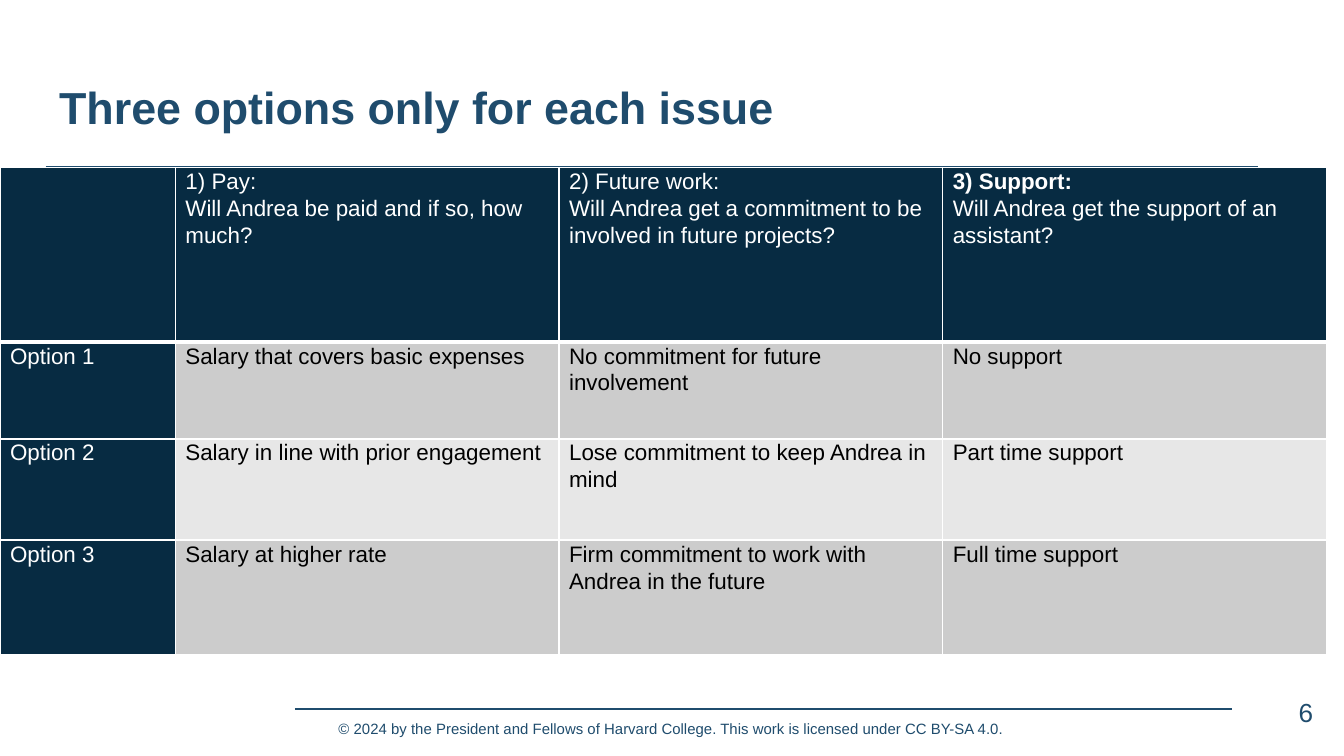
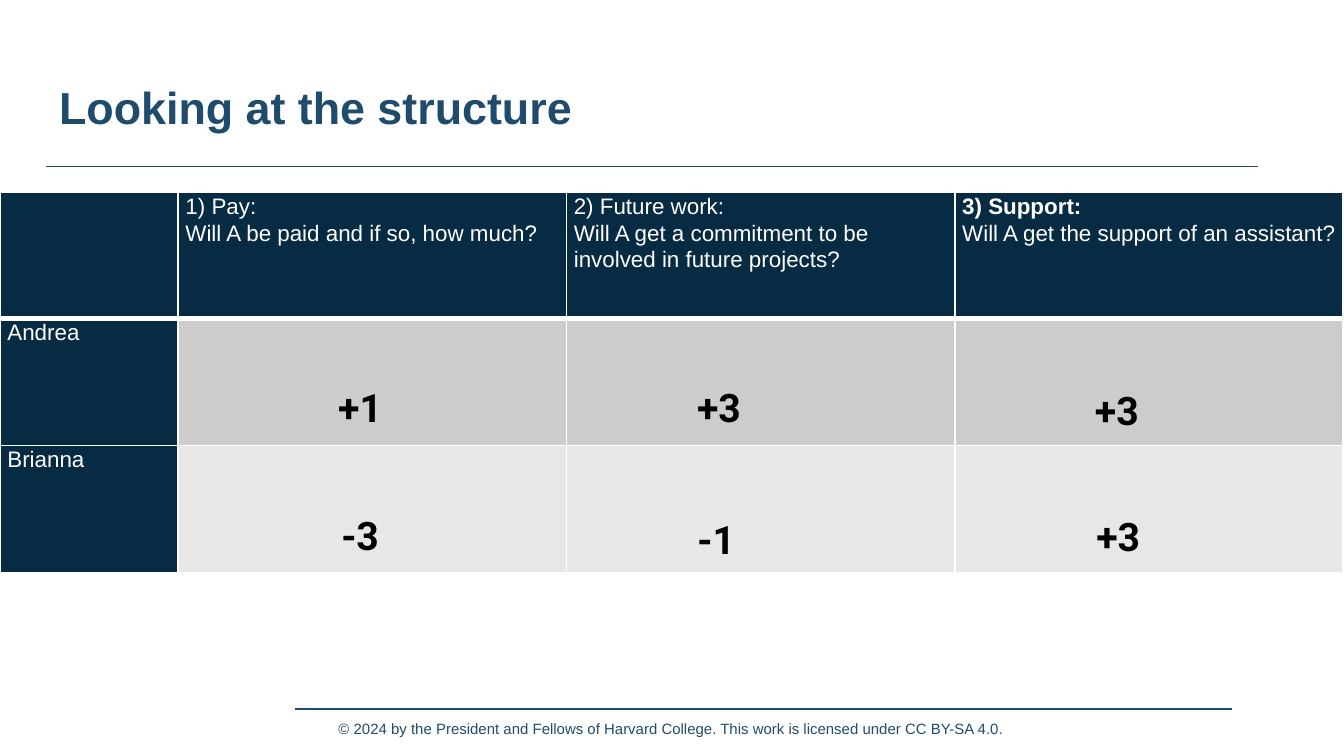
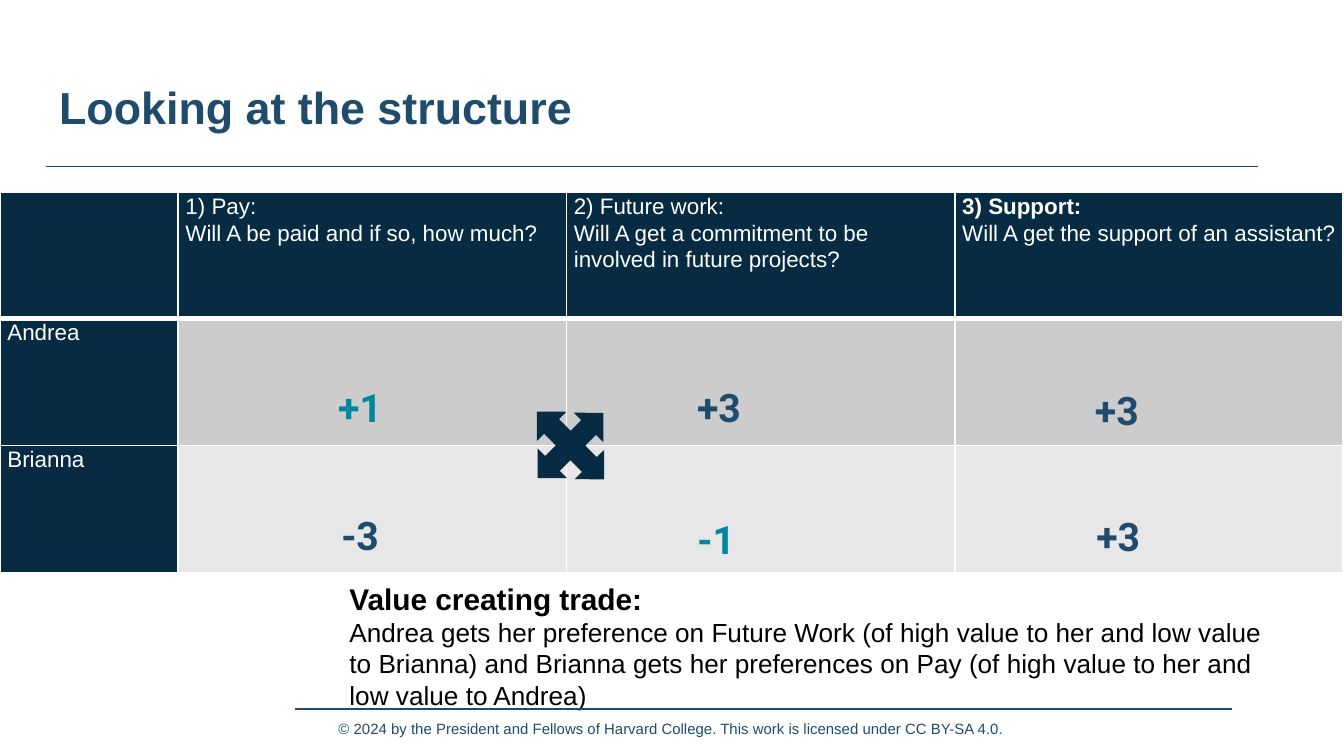
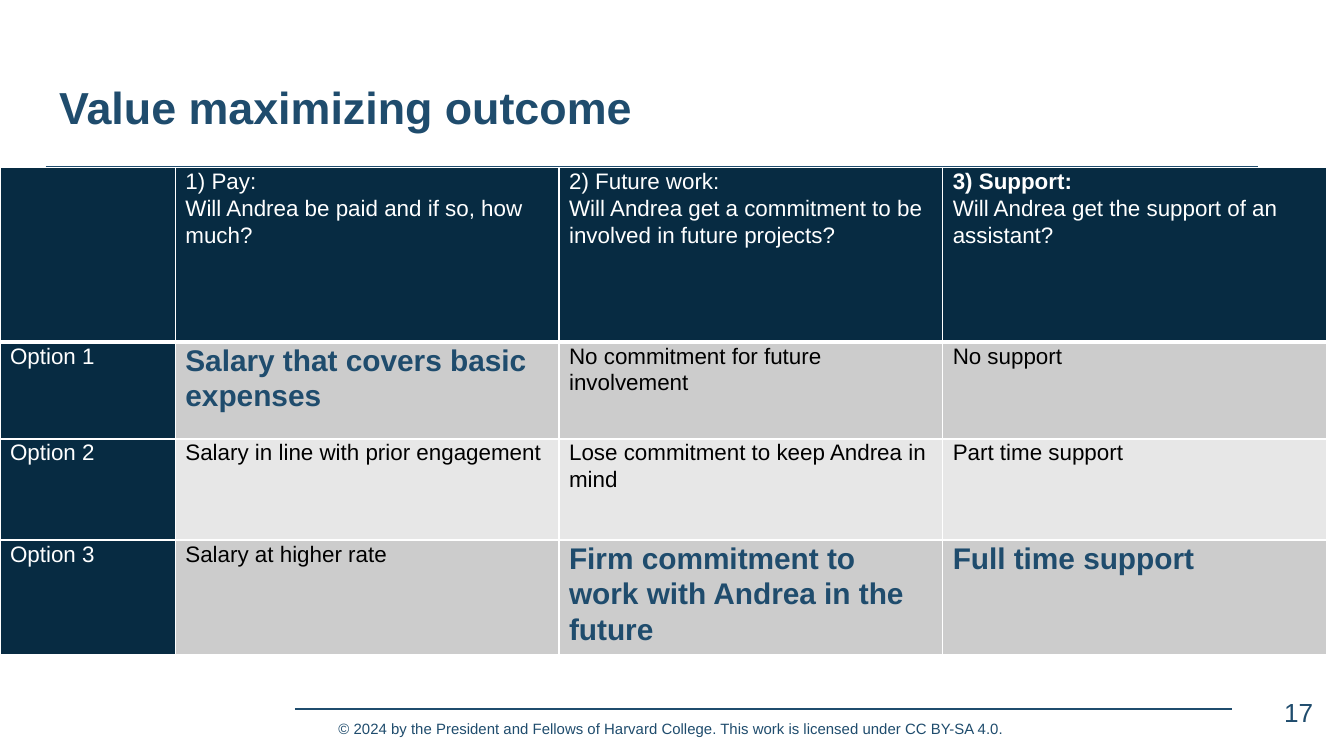
from lxml.etree import SubElement
from pptx import Presentation
from pptx.dml.color import RGBColor
from pptx.enum.shapes import MSO_CONNECTOR, MSO_SHAPE
from pptx.enum.text import MSO_ANCHOR as ANCHOR, MSO_AUTO_SIZE as FIT, PP_ALIGN as ALIGN
from pptx.oxml import parse_xml
from pptx.oxml.ns import nsdecls, qn
from pptx.util import Pt

PX = 4572  # 200 px to the inch
COLORS = {
    "blue": "1F4C6D", "navy": "072B42", "teal": "00879F",
    "white": "FFFFFF", "black": "000000", "dark_band": "CCCCCC", "light_band": "E7E7E7",
}
TITLE_ONLY, TITLE_BODY = 5, 1
CELL_SPACING = 1.07
COPYRIGHT = ("© 2024 by the President and Fellows of Harvard College. "
             "This work is licensed under CC BY-SA 4.0.")

OPTIONS = [
    ["Option 1", "Salary that covers basic expenses",
     "No commitment for future involvement", "No support"],
    ["Option 2", "Salary in line with prior engagement",
     "Lose commitment to keep Andrea in mind", "Part time support"],
    ["Option 3", "Salary at higher rate",
     "Firm commitment to work with Andrea in the future", "Full time support"],
]
# left, top, score, colour once the trade is marked
SCORES = [
    (23, 556, "+1", "teal"), (23, 746, "-3", "blue"),
    (557, 556, "+3", "blue"), (553, 752, "-1", "teal"),
    (1149, 560, "+3", "blue"), (1151, 748, "+3", "blue"),
]


def rgb(name):
    return RGBColor.from_string(COLORS[name])


def emu(*lengths):
    return [n * PX for n in lengths]


def write(tf, text, p=None, size=12, color="black", bold=False, font="Arial",
          align=ALIGN.LEFT, spacing=1.0):
    """Add formatted text as a new paragraph, or at the end of p."""
    if p is None:
        p = tf.add_paragraph() if tf.text else tf.paragraphs[0]
        p.alignment, p.line_spacing = align, spacing
        p.space_before = p.space_after = Pt(0)
    for i, line in enumerate(text.split("\n")):
        if i:
            p.add_line_break()
            SubElement(p._p.findall(qn("a:br"))[-1], qn("a:rPr"), sz=str(size * 100))
        if line:
            r = p.add_run()
            r.text = line
            r.font.size, r.font.bold, r.font.name = Pt(size), bold, font
            r.font.color.rgb = rgb(color)
    return p


def place(sp, box):
    sp.left, sp.top, sp.width, sp.height = emu(*box)


def set_insets(tf, inset):
    tf.margin_left = tf.margin_top = tf.margin_right = tf.margin_bottom = inset * PX


def text_box(s, box, anchor=ANCHOR.TOP, fit=FIT.SHAPE_TO_FIT_TEXT):
    tf = s.shapes.add_textbox(*emu(*box)).text_frame
    tf.word_wrap, tf.vertical_anchor, tf.auto_size = True, anchor, fit
    return tf


def rule(s, left, right, y):
    line = s.shapes.add_connector(MSO_CONNECTOR.STRAIGHT, *emu(left, y, right, y))
    line.line.color.rgb, line.line.width = rgb("blue"), Pt(0.75)
    SubElement(line.element.spPr, qn("a:effectLst"))


# Frame shared by all slides
def new_slide(prs, title, layout=TITLE_ONLY, number=None):
    s = prs.slides.add_slide(prs.slide_layouts[layout])
    rule(s, 439, 1834, 1055)
    write(text_box(s, (484, 1061, 1350, 48)), COPYRIGHT, size=8, color="blue")
    rule(s, 68, 1872, 248)

    place(s.shapes.title, (68, 98, 1864, 126))
    tf = s.shapes.title.text_frame
    tf.vertical_anchor, tf.auto_size = ANCHOR.TOP, FIT.NONE
    set_insets(tf, 20)
    write(tf, title, size=24, color="blue", bold=True)

    if number:
        tf = text_box(s, (1854, 1020, 120, 86), ANCHOR.MIDDLE, FIT.NONE)
        set_insets(tf, 20)
        write(tf, number, size=14, color="blue", align=ALIGN.RIGHT, spacing=0.9)
    return s


def style_cell(cell, fill, inset, bottom=1):
    cell.fill.solid()
    cell.fill.fore_color.rgb = rgb(fill)
    cell.margin_left = cell.margin_right = inset * PX
    cell.margin_top = cell.margin_bottom = 0
    tc_pr = cell._tc.get_or_add_tcPr()
    for i, (side, width) in enumerate(zip("LRTB", (1, 1, 1, bottom))):
        tc_pr.insert(i, parse_xml(
            f'<a:ln{side} {nsdecls("a")} w="{Pt(width)}"><a:solidFill>'
            f'<a:srgbClr val="{COLORS["white"]}"/></a:solidFill></a:ln{side}>'))


def issue_table(s, top, widths, heights, person, rows, inset, chosen=()):
    """Issues across the top, one labelled row for each entry of rows."""
    issues = [
        ["1) Pay:", f"Will {person} be paid and if so, how much?"],
        [f"2) Future work:\nWill {person} get a commitment to be involved "
         "in future projects?"],
        ["3) Support:", f"Will {person} get the support of an assistant?"],
    ]
    frame = s.shapes.add_table(len(heights), len(widths),
                               *emu(0, top, sum(widths), sum(heights)))
    table = frame.table
    for col, width in zip(table.columns, widths):
        col.width = width * PX
    for row, height in zip(table.rows, heights):
        row.height = height * PX

    # Header row
    for c, paragraphs in enumerate([[]] + issues):
        cell = table.cell(0, c)
        style_cell(cell, "navy", inset, bottom=3)
        for text in paragraphs:
            write(cell.text_frame, text, color="white", bold=text == "3) Support:",
                  spacing=CELL_SPACING)

    # Label column and banded body
    for r, texts in enumerate(rows, 1):
        band = "dark_band" if r % 2 else "light_band"
        for c, text in enumerate(texts):
            cell = table.cell(r, c)
            style_cell(cell, band if c else "navy", inset)
            if (r, c) in chosen:
                look = {"size": 16, "color": "blue", "bold": True}
            else:
                look = {"color": "black" if c else "white"}
            if text:
                write(cell.text_frame, text, spacing=CELL_SPACING, **look)


# Slide type: the options for each issue
def options_slide(prs, title, number, chosen=()):
    s = new_slide(prs, title, number=number)
    issue_table(s, 249, [261] + [571] * 3, [260, 144, 151, 171], "Andrea",
                OPTIONS, 15, chosen)


# Slide type: the scores of both sides
def structure_slide(prs, layout=TITLE_ONLY, marked=False):
    s = new_slide(prs, "Looking at the structure", layout)
    rows = [[name, "", "", ""] for name in ("Andrea", "Brianna")]
    issue_table(s, 286, [265] + [578] * 3, [188, 189, 189], "A", rows, 11)
    for left, top, score, color in SCORES:
        write(text_box(s, (left, top, 1026, 92)), score, size=21, bold=True, font="Roboto",
              color=color if marked else "black", align=ALIGN.CENTER, spacing=CELL_SPACING)
    return s


def trade_arrows(s, box):
    sp = s.shapes.add_shape(MSO_SHAPE.QUAD_ARROW, *emu(*box))
    sp.rotation = 45.2
    sp.shadow.inherit = False
    sp.fill.solid()
    sp.fill.fore_color.rgb = rgb("navy")
    sp.line.fill.background()


def trade_note(s, box):
    body = s.placeholders[1]
    place(body, box)
    tf = body.text_frame
    tf.auto_size, tf.vertical_anchor = FIT.NONE, ANCHOR.TOP
    p = write(tf, "Value creating trade:\n", size=16, bold=True)
    write(tf, "Andrea gets her preference on Future Work (of high value to her and low "
              "value to Brianna) and Brianna gets her preferences on Pay (of high value "
              "to her and low value to Andrea)", p, size=14)
    p_pr = p._p.get_or_add_pPr()
    p_pr.set("marL", "0")
    p_pr.set("indent", "0")
    SubElement(p_pr, qn("a:buNone"))


def main():
    prs = Presentation()
    prs.slide_width, prs.slide_height = emu(2000, 1125)

    options_slide(prs, "Three options only for each issue", "6")
    structure_slide(prs)
    s = structure_slide(prs, TITLE_BODY, marked=True)
    trade_arrows(s, (778, 594, 142, 138))
    trade_note(s, (500, 854, 1432, 198))
    options_slide(prs, "Value maximizing outcome", "17", chosen={(1, 1), (3, 2), (3, 3)})

    prs.save("out.pptx")


if __name__ == "__main__":
    main()
